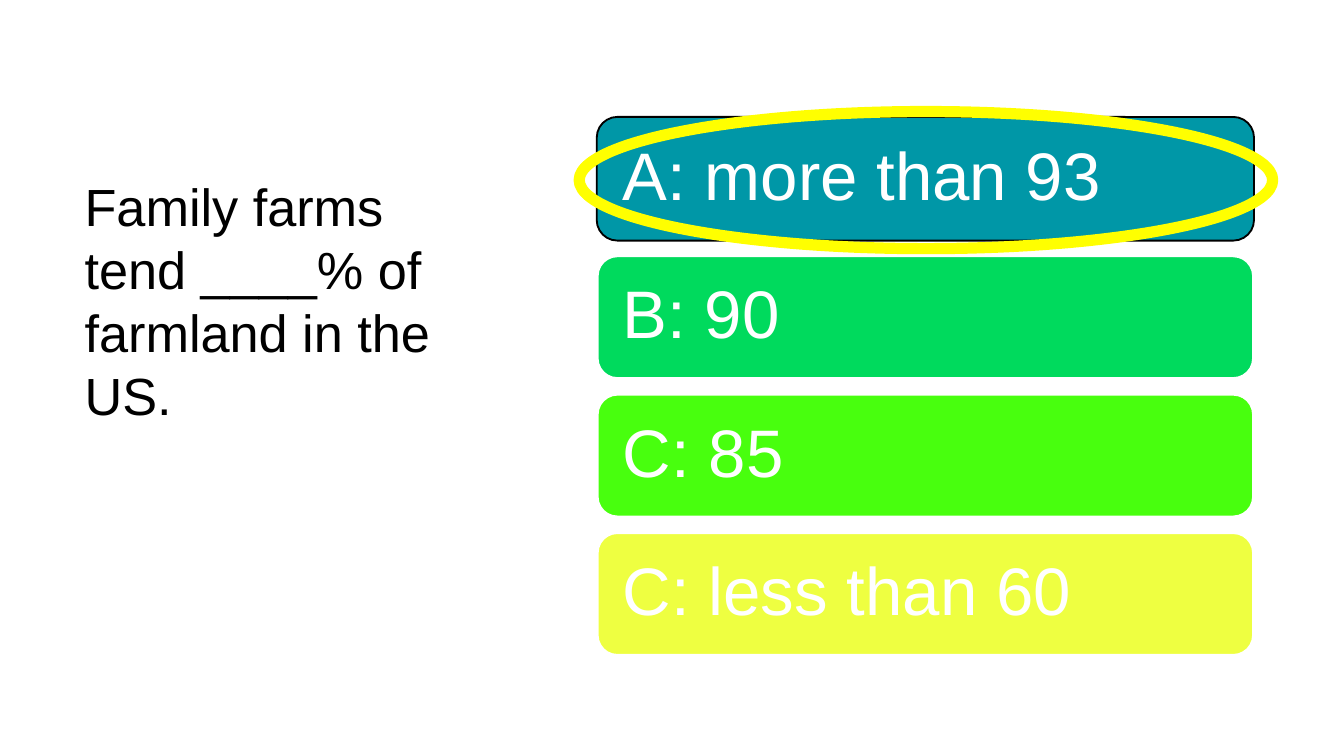
from pptx import Presentation
from pptx.dml.color import RGBColor
from pptx.enum import shapes, text
from pptx.util import Inches, Pt

BLACK = RGBColor(0x00, 0x00, 0x00)
WHITE = RGBColor(0xFF, 0xFF, 0xFF)
TEAL = RGBColor(0x00, 0x97, 0xA7)
GREEN = RGBColor(0x00, 0xDA, 0x5D)
LIME = RGBColor(0x48, 0xFF, 0x0E)
LEMON = RGBColor(0xEE, 0xFF, 0x41)
YELLOW = RGBColor(0xFF, 0xFF, 0x00)

# Answer label, fill, outline colour, outline width
ANSWERS = [
    ("A: more than 93", TEAL, BLACK, 1),
    ("B: 90", GREEN, WHITE, 2),
    ("C: 85", LIME, WHITE, 2),
    ("C: less than 60", LEMON, WHITE, 2),
]
LEFT, TOP, WIDTH, HEIGHT, PITCH = 4.44, 0.87, 4.89, 0.92, 1.03
PAD = 0.045  # gap between a bar's edge and its label box


def write(shape, words, *, size, color, inset, spacing, anchor):
    frame = shape.text_frame
    frame.word_wrap = True
    frame.auto_size = text.MSO_AUTO_SIZE.NONE
    frame.vertical_anchor = anchor
    frame.margin_left = frame.margin_right = Inches(inset)
    frame.margin_top = frame.margin_bottom = Inches(inset)
    para = frame.paragraphs[0]
    para.alignment = text.PP_ALIGN.LEFT
    para.line_spacing = spacing
    run = para.add_run()
    run.text = words
    run.font.name = "Arial"
    run.font.size = Pt(size)
    run.font.color.rgb = color


def draw(parent, kind, box, *, line, width, fill=None):
    shape = parent.add_shape(kind, *map(Inches, box))
    shape.shadow.inherit = False
    if fill is None:
        shape.fill.background()
    else:
        shape.fill.solid()
        shape.fill.fore_color.rgb = fill
    shape.line.color.rgb = line
    shape.line.width = Pt(width)


def ask(slide):
    title = slide.shapes.title
    title.left, title.top = Inches(0.53), Inches(1.2)
    title.width, title.height = Inches(3.11), Inches(2.21)
    write(title, "Family farms tend ____% of farmland in the US.", size=28,
          color=BLACK, inset=0.1, spacing=1.0, anchor=text.MSO_ANCHOR.TOP)


def list_answers(slide):
    group = slide.shapes.add_group_shape().shapes
    for row, (words, fill, line, width) in enumerate(ANSWERS):
        top = TOP + row * PITCH
        draw(group, shapes.MSO_SHAPE.ROUNDED_RECTANGLE,
             (LEFT, top, WIDTH, HEIGHT), fill=fill, line=line, width=width)
        label = group.add_textbox(Inches(LEFT + PAD), Inches(top + PAD),
                                  Inches(WIDTH - 2 * PAD),
                                  Inches(HEIGHT - 2 * PAD))
        write(label, words, size=36, color=WHITE, inset=0.15, spacing=0.9,
              anchor=text.MSO_ANCHOR.MIDDLE)


def main():
    deck = Presentation()
    deck.slide_width = Inches(10)
    deck.slide_height = deck.slide_width * 9 // 16
    slide = deck.slides.add_slide(deck.slide_layouts[5])

    # Question and its four answers
    ask(slide)
    list_answers(slide)

    # Ring around the right answer
    draw(slide.shapes, shapes.MSO_SHAPE.OVAL, (4.31, 0.83, 5.16, 1.02),
         line=YELLOW, width=6)

    deck.save("out.pptx")


if __name__ == "__main__":
    main()
